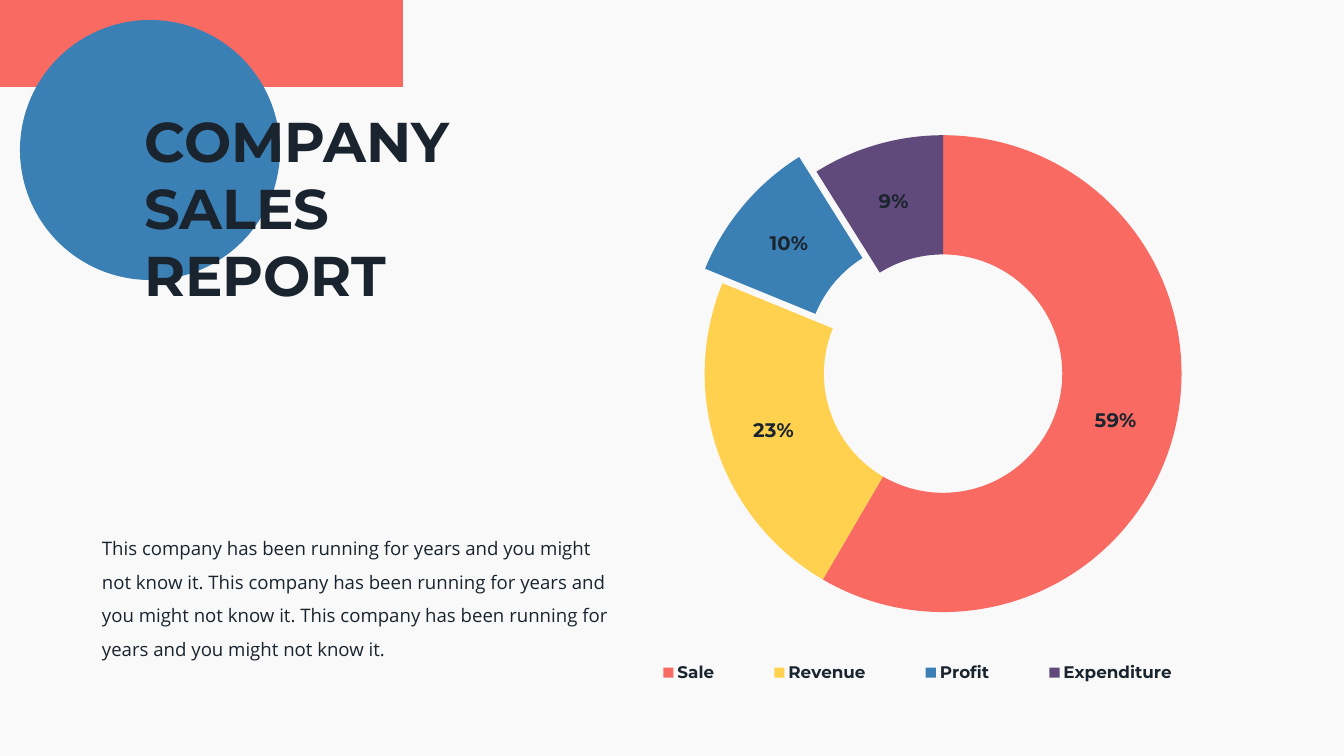
from lxml import etree
from pptx import Presentation
from pptx import util as u
from pptx.chart.data import CategoryChartData
from pptx.dml.color import RGBColor
from pptx.enum import chart as charts, shapes, text
from pptx.oxml import ns

SCALE = 12192000 / 1344  # EMU in one px
CORAL, BLUE, GOLD, PLUM = "F96A62", "3B80B5", "FFD14F", "604A7B"
INK, PAPER = "1A242E", "F9F9F9"
HEAD, BODY = "Montserrat", "Open Sans"


def px(n):
    return u.Emu(round(n * SCALE))


def tint(code):
    return RGBColor.from_string(code)


def node(tag, **attrs):
    return etree.Element(ns.qn(tag), attrs)


class Deck:
    def __init__(self):
        self.prs = Presentation()
        self.prs.slide_width, self.prs.slide_height = px(1344), px(756)
        self.slide = self.prs.slides.add_slide(self.prs.slide_layouts[5])
        back = self.slide.background.fill
        back.solid()
        back.fore_color.rgb = tint(PAPER)

    def font(self, font, size, name, bold=False):
        style = {"size": u.Pt(size), "name": name, "bold": bold}
        for key, value in style.items():
            setattr(font, key, value)
        font.color.rgb = tint(INK)

    def shape(self, kind, box, fill):
        item = self.slide.shapes.add_shape(kind, *map(px, box))
        item.shadow.inherit = False
        item.fill.solid()
        item.fill.fore_color.rgb = tint(fill)
        item.line.fill.background()

    def label(self, item, words, style, frame, para):
        tf = item.text_frame
        for key, value in frame.items():
            setattr(tf, key, value)
        line = tf.paragraphs[0]
        line.text = words
        for key, value in para.items():
            setattr(line, key, value)
        for run in line.runs:
            self.font(run.font, *style)

    def title(self, box, words):
        item = self.slide.shapes.title
        item.left, item.top, item.width, item.height = map(px, box)
        # Bring the title in front of the shapes
        item.element.getparent().append(item.element)
        frame = {"auto_size": text.MSO_AUTO_SIZE.NONE, "word_wrap": True,
                 "vertical_anchor": text.MSO_ANCHOR.MIDDLE}
        para = {"alignment": text.PP_ALIGN.LEFT, "line_spacing": 1.0,
                "space_before": u.Pt(0)}
        self.label(item, words, (40, HEAD, True), frame, para)

    def text(self, box, words):
        item = self.slide.shapes.add_textbox(*map(px, box))
        para = {"line_spacing": 1.5, "space_before": u.Pt(7.5)}
        self.label(item, words, (13.3, BODY), {"word_wrap": True}, para)

    def place(self, parent, index, box, inner=False):
        """Give a chart part a manual layout, in fractions of the chart."""
        for old in parent.findall(ns.qn("c:layout")):
            parent.remove(old)
        layout, manual = node("c:layout"), node("c:manualLayout")
        layout.append(manual)
        if inner:
            manual.append(node("c:layoutTarget", val="inner"))
        for key in ("xMode", "yMode"):
            manual.append(node("c:" + key, val="edge"))
        for key, value in zip("xywh", box):
            manual.append(node("c:" + key, val=str(value)))
        parent.insert(index, layout)

    def ring(self, box, parts, burst):
        data = CategoryChartData()
        data.categories = [name for name, _, _ in parts]
        data.add_series("Series 1", [value for _, value, _ in parts])
        chart = self.slide.shapes.add_chart(
            charts.XL_CHART_TYPE.DOUGHNUT, *map(px, box), data).chart
        chart.has_title = False
        self.font(chart.font, 10, BODY)
        plot = chart.plots[0]
        plot.vary_by_categories = True

        # Slices, with one pulled out
        for i, (_, _, fill) in enumerate(parts):
            look = plot.series[0].points[i].format
            look.fill.solid()
            look.fill.fore_color.rgb = tint(fill)
            look.line.fill.background()
        root = chart._chartSpace
        spot = root.xpath(f".//c:dPt[c:idx/@val='{burst}']/c:spPr")[0]
        spot.addprevious(node("c:explosion", val="19"))
        root.xpath(".//c:holeSize")[0].set("val", "55")

        # Labels
        plot.has_data_labels = True
        marks = {"show_percentage": False, "show_value": True,
                 "number_format": '0"%"', "number_format_is_linked": False}
        for key, value in marks.items():
            setattr(plot.data_labels, key, value)
        self.font(plot.data_labels.font, 14, HEAD, True)

        # Legend and layout
        chart.has_legend = True
        chart.legend.position = charts.XL_LEGEND_POSITION.RIGHT
        chart.legend.include_in_layout = False
        self.font(chart.legend.font, 12, HEAD, True)
        self.place(root.xpath(".//c:plotArea")[0], 0,
                   (0.24, 0.18, 0.57, 0.63), True)
        self.place(root.xpath(".//c:legend")[0], 1, (0.13, 0.86, 0.73, 0.06))


def main():
    deck = Deck()

    # Corner shapes
    kinds = shapes.MSO_SHAPE
    deck.shape(kinds.RECTANGLE, (0, 0, 403, 87), CORAL)
    deck.shape(kinds.OVAL, (20, 20, 260, 260), BLUE)

    # Title
    deck.title((134, 98, 403, 218), "COMPANY\nSALES\nREPORT")

    # Doughnut chart
    parts = [("Sale", 59, CORAL), ("Revenue", 23, GOLD),
             ("Profit", 10, BLUE), ("Expenditure", 9, PLUM)]
    deck.ring((499, -1, 846, 757), parts, burst=2)

    # Body text
    deck.text((92, 521, 533, 187), " ".join(
        ["This company has been running for years and you might not know it."] * 3))

    deck.prs.save("out.pptx")


if __name__ == "__main__":
    main()
